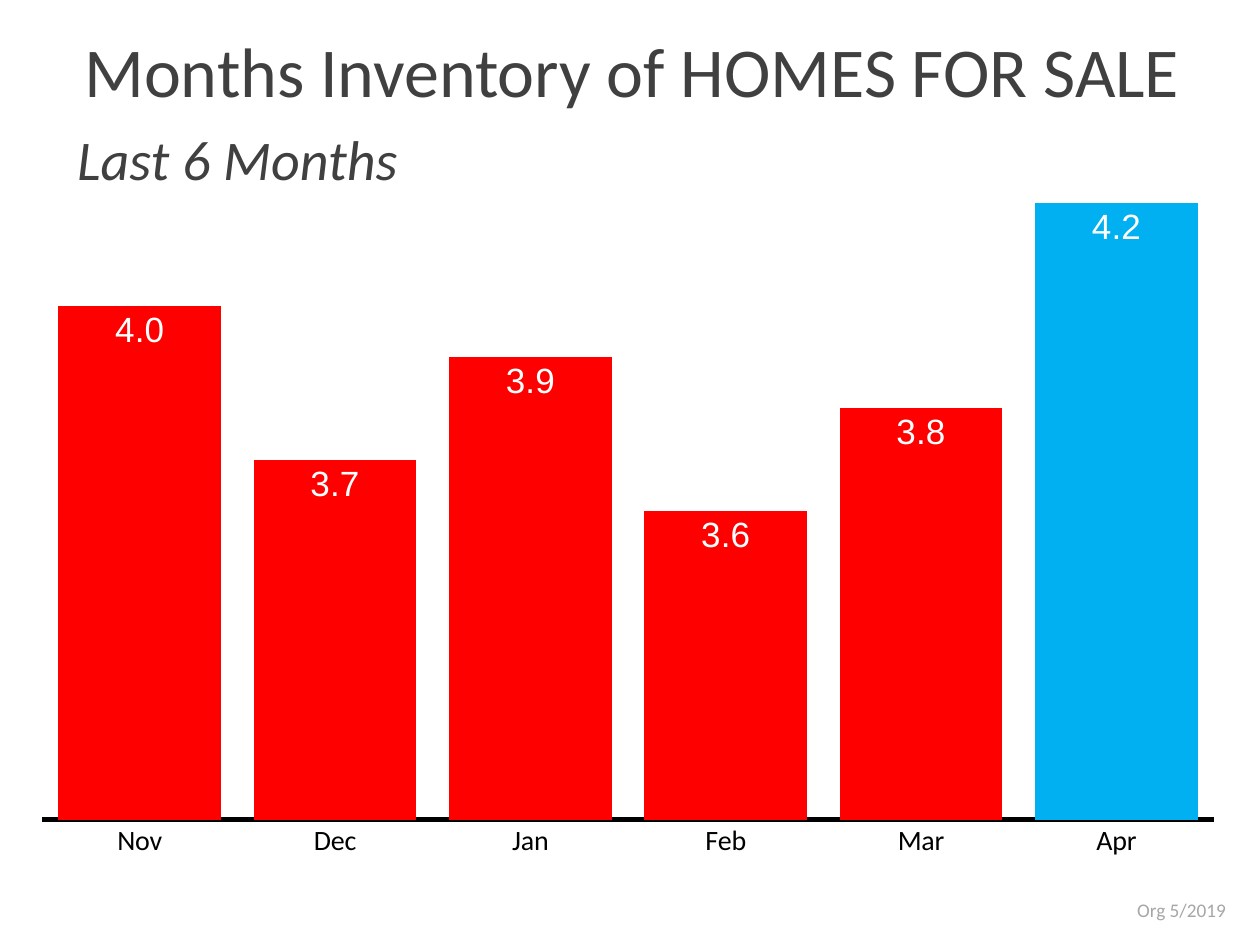
from pptx import Presentation
from pptx.chart.data import CategoryChartData
from pptx.dml.color import RGBColor
from pptx.enum.chart import XL_CHART_TYPE, XL_LABEL_POSITION, XL_TICK_MARK
from pptx.enum.text import MSO_ANCHOR, MSO_AUTO_SIZE, PP_ALIGN
from pptx.oxml import parse_xml
from pptx.oxml.ns import nsdecls
from pptx.util import Pt

PX = 9144
TITLE_ONLY = 5
COLUMNS = XL_CHART_TYPE.COLUMN_CLUSTERED
INSIDE_END = XL_LABEL_POSITION.INSIDE_END
NO_TICK = XL_TICK_MARK.NONE
CENTER, RIGHT = PP_ALIGN.CENTER, PP_ALIGN.RIGHT
TOP = MSO_ANCHOR.TOP
NO_FIT = MSO_AUTO_SIZE.NONE

MONTHS = ["Nov", "Dec", "Jan", "Feb", "Mar", "Apr"]
INVENTORY = [4.0, 3.7, 3.9, 3.6, 3.8, 4.2]
PLOT_AREA = {"x": 0.02, "y": 0.03, "w": 0.96, "h": 0.85}
BLACK, WHITE, RED, BLUE = "000000", "FFFFFF", "FF0000", "00B0F0"
DARK_GRAY, LIGHT_GRAY = "404040", "A6A6A6"


def color(value):
    """Return the colour for a hex string."""
    return RGBColor.from_string(value)


def scaled(box):
    """Turn a box in px into EMU."""
    return [length * PX for length in box]


def set_font(font, size, shade, name="Calibri", italic=None):
    """Set size, colour, typeface and slant of a font."""
    font.size, font.name, font.italic = Pt(size), name, italic
    font.color.rgb = color(shade)


def write(shape, text, size, shade, align, wrap=True, italic=None):
    """Fill a shape with one formatted line of text."""
    frame = shape.text_frame
    frame.text = text
    frame.word_wrap, frame.vertical_anchor = wrap, TOP
    frame.auto_size = NO_FIT
    para = frame.paragraphs[0]
    para.alignment = align
    set_font(para.font, size, shade, italic=italic)


def place_plot(chart):
    """Fix the inner plot area as fractions of the chart."""
    plot_area = chart._chartSpace.chart.plotArea
    for layout in plot_area.findall("{*}layout"):
        plot_area.remove(layout)
    modes = "".join(f'<c:{side}Mode val="edge"/>' for side in "xy")
    sizes = "".join(f'<c:{key} val="{value}"/>' for key, value in PLOT_AREA.items())
    plot_area.insert(0, parse_xml(
        f'<c:layout {nsdecls("c")}><c:manualLayout><c:layoutTarget val="inner"/>'
        f"{modes}{sizes}</c:manualLayout></c:layout>"))


def format_axes(chart):
    """Show a bold month axis and hide the value axis."""
    months, values = chart.category_axis, chart.value_axis
    months.major_tick_mark = months.minor_tick_mark = NO_TICK
    months.format.line.color.rgb = color(BLACK)
    months.format.line.width = Pt(3)
    set_font(months.tick_labels.font, 16, BLACK)
    values.minimum_scale, values.maximum_scale, values.major_unit = 3, 4.5, 0.2
    values.has_major_gridlines = False
    values.visible = False


def add_inventory_chart(page, box):
    """Add the column chart with the latest month highlighted."""
    data = CategoryChartData(number_format="0.0")
    data.categories = MONTHS
    data.add_series("Series 1", INVENTORY)
    chart = page.shapes.add_chart(COLUMNS, *scaled(box), data).chart
    chart.has_title = chart.has_legend = False
    set_font(chart.font, 10, BLACK)
    place_plot(chart)
    format_axes(chart)
    plot = chart.plots[0]
    plot.gap_width, plot.vary_by_categories = 20, False
    series = plot.series[0]
    series.invert_if_negative = False
    latest = series.points[len(MONTHS) - 1]
    for bar, shade in ((series, RED), (latest, BLUE)):
        bar.format.fill.solid()
        bar.format.fill.fore_color.rgb = color(shade)
    labels = series.data_labels
    labels.show_value, labels.position = True, INSIDE_END
    labels.number_format, labels.number_format_is_linked = "0.0", False
    set_font(labels.font, 20, WHITE, "Arial")


def add_title(page, box):
    """Place the title in front of the chart."""
    title = page.shapes.title
    title.left, title.top, title.width, title.height = scaled(box)
    write(title, "Months Inventory of HOMES FOR SALE", 40, DARK_GRAY, CENTER)
    page.shapes._spTree.append(title._element)


def add_text(page, box, *args, **kwargs):
    """Add a text box with one line."""
    write(page.shapes.add_textbox(*scaled(box)), *args, **kwargs)


def main():
    """Build and save the slide."""
    deck = Presentation()
    deck.slide_width, deck.slide_height = 1000 * PX, 750 * PX
    page = deck.slides.add_slide(deck.slide_layouts[TITLE_ONLY])
    add_inventory_chart(page, (14, 17, 969, 720))
    add_text(page, (851, 708, 132, 29), "Org 5/2019", 11, LIGHT_GRAY, RIGHT)
    add_title(page, (53, 17, 897, 77))
    add_text(page, (50, 94, 277, 64), "Last 6 Months", 32, DARK_GRAY, CENTER,
             wrap=False, italic=True)
    deck.save("out.pptx")


if __name__ == "__main__":
    main()
